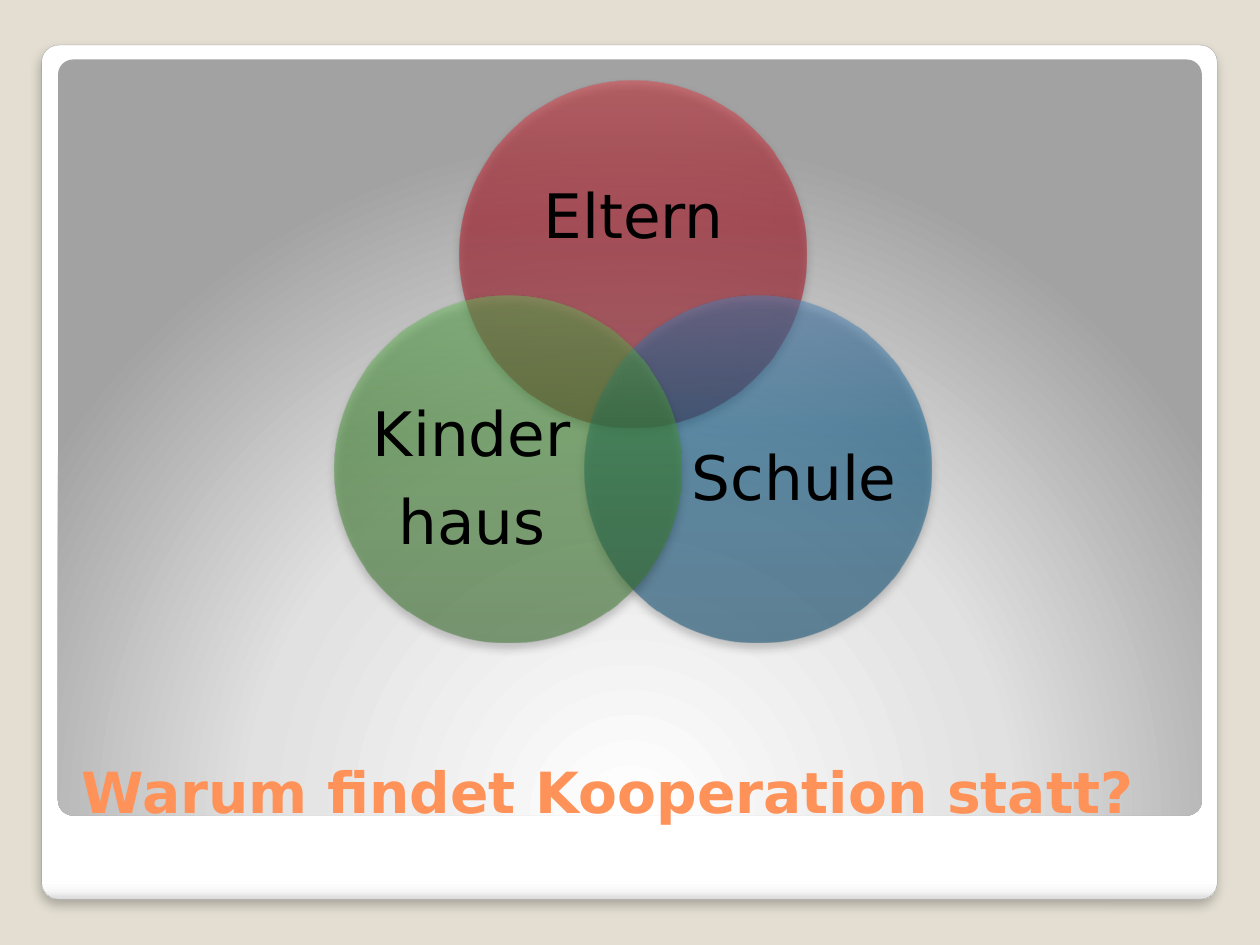
"""Build a slide with three overlapping circles on why cooperation takes place."""
from lxml.etree import SubElement
from pptx import Presentation
from pptx.dml.color import RGBColor
from pptx.enum.shapes import MSO_SHAPE
from pptx.enum.text import MSO_ANCHOR, PP_ALIGN
from pptx.oxml.ns import qn
from pptx.util import Cm, Pt

BACKGROUND = RGBColor(0xE3, 0xDE, 0xD1)
WHITE = RGBColor(0xFF, 0xFF, 0xFF)
BLACK = RGBColor(0x00, 0x00, 0x00)
ORANGE = RGBColor(0xFF, 0x92, 0x58)
FRAME_LINE = RGBColor(0xA4, 0xA4, 0xA4)
FRAME_STOPS = [(0, WHITE), (98, WHITE), (99, RGBColor(0xF7, 0xF7, 0xF7)), (100, RGBColor(0xDA, 0xDA, 0xDA))]
PANEL_STOPS = [(0, WHITE), (55, RGBColor(0xE1, 0xE1, 0xE1)), (100, RGBColor(0xA2, 0xA2, 0xA2))]
REDS = [RGBColor(0x87, 0x06, 0x14), RGBColor(0xB8, 0x0B, 0x1E), RGBColor(0xE1, 0x3C, 0x45)]
BLUES = [RGBColor(0x00, 0x43, 0x6A), RGBColor(0x03, 0x5C, 0x91), RGBColor(0x4A, 0x80, 0xB7)]
GREENS = [RGBColor(0x2F, 0x6B, 0x22), RGBColor(0x42, 0x92, 0x30), RGBColor(0x66, 0xB9, 0x59)]
FONT = "DejaVu Sans"
DIAMETER = 6.99


def add_gradient_shape(kind, box, stops, angle=None, opacity=100, shadow=None):
    shape = slide.shapes.add_shape(kind, *[Cm(length) for length in box])
    shape.line.fill.background()
    shape.shadow.inherit = False
    properties = shape._element.spPr
    gradient = SubElement(properties, qn("a:gradFill"), rotWithShape="1")
    properties.find(qn("a:prstGeom")).addnext(gradient)
    stop_list = SubElement(gradient, qn("a:gsLst"))
    for position, color in stops:
        stop = SubElement(stop_list, qn("a:gs"), pos=str(position * 1000))
        value = SubElement(stop, qn("a:srgbClr"), val=str(color))
        if opacity < 100:
            SubElement(value, qn("a:alpha"), val=str(opacity * 1000))
    if angle is None:
        radial = SubElement(gradient, qn("a:path"), path="circle")
        SubElement(radial, qn("a:fillToRect"), l="50000", t="175000", r="50000", b="-75000")
    else:
        SubElement(gradient, qn("a:lin"), ang=str(angle * 60000), scaled="0")
    if shadow:
        strength, blur, distance = shadow
        outer = SubElement(
            properties.find(qn("a:effectLst")), qn("a:outerShdw"),
            blurRad=str(Pt(blur)), dist=str(Pt(distance)), dir="5400000", rotWithShape="0",
        )
        shade = SubElement(outer, qn("a:srgbClr"), val=str(BLACK))
        SubElement(shade, qn("a:alpha"), val=str(strength * 1000))
    return shape


def add_text(box, lines, size, color, anchor):
    shape = slide.shapes.add_textbox(*[Cm(length) for length in box])
    text_frame = shape.text_frame
    text_frame.word_wrap = True
    text_frame.vertical_anchor = anchor
    text_frame.text = "\n".join(lines)
    for paragraph in text_frame.paragraphs:
        font = paragraph.runs[0].font
        font.name = FONT
        font.size = Pt(size)
        font.color.rgb = color
    return text_frame


presentation = Presentation()
presentation.slide_width = Cm(25.4)
presentation.slide_height = Cm(19.05)
slide = presentation.slides.add_slide(presentation.slide_layouts[6])
slide.background.fill.solid()
slide.background.fill.fore_color.rgb = BACKGROUND

frame = add_gradient_shape(
    MSO_SHAPE.ROUNDED_RECTANGLE, (0.84, 0.91, 23.7, 17.22), FRAME_STOPS, angle=90, shadow=(25, 6, 4)
)
frame.line.color.rgb = FRAME_LINE
frame.line.width = Pt(0.16)
panel = add_gradient_shape(MSO_SHAPE.ROUNDED_RECTANGLE, (1.17, 1.2, 23.06, 15.24), PANEL_STOPS)
for rounded in (frame, panel):
    rounded.adjustments[0] = 0.02

title = add_text((1.4, 13.84, 22.73, 2.92), ["Warum findet Kooperation statt?"], 32.4, ORANGE, MSO_ANCHOR.BOTTOM)
title.paragraphs[0].runs[0].font.bold = True

circles = [
    (9.27, 1.62, REDS, ["Eltern"], (10.21, 2.84, 5.13, 3.15)),
    (11.79, 5.97, BLUES, ["Schule"], (13.92, 7.77, 4.19, 3.84)),
    (6.74, 5.97, GREENS, ["Kinder", "haus"], (7.42, 7.77, 4.19, 3.84)),
]
for left, top, colors, lines, label_box in circles:
    add_gradient_shape(
        MSO_SHAPE.OVAL, (left, top, DIAMETER, DIAMETER), list(zip((0, 60, 100), colors)),
        angle=270, opacity=50, shadow=(40, 5.2, 3),
    )
    label = add_text(label_box, lines, 35, BLACK, MSO_ANCHOR.MIDDLE)
    label.margin_left = label.margin_right = label.margin_top = label.margin_bottom = 0
    for paragraph in label.paragraphs:
        paragraph.alignment = PP_ALIGN.CENTER
        paragraph.line_spacing = 0.9
        paragraph.space_after = Pt(13)

presentation.save("out.pptx")
